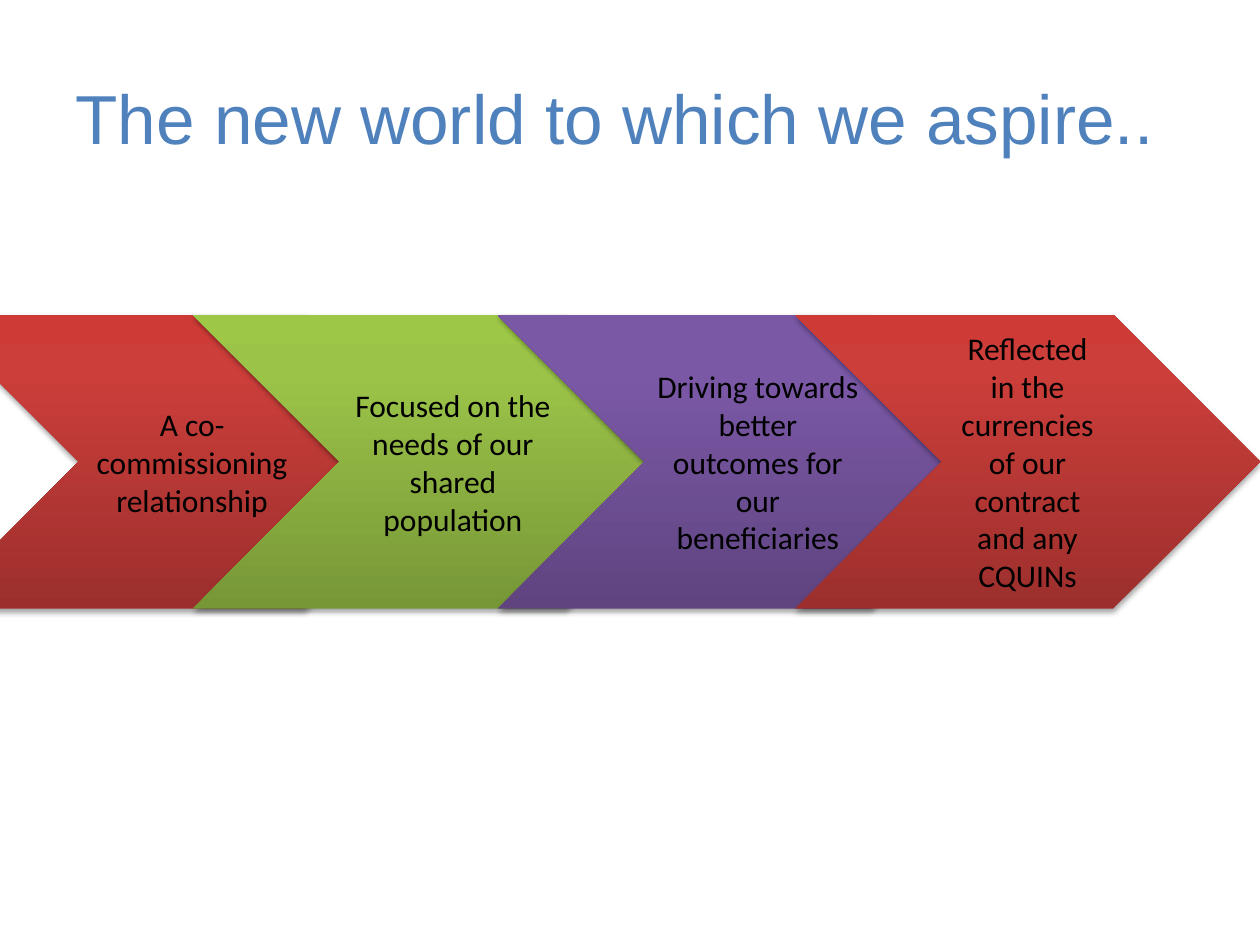
from typing import NamedTuple

from lxml import etree
from pptx import Presentation
from pptx.dml.color import RGBColor
from pptx.enum.shapes import MSO_SHAPE
from pptx.enum.text import MSO_ANCHOR, MSO_AUTO_SIZE, PP_ALIGN
from pptx.oxml.ns import qn
from pptx.util import Inches, Pt

CHEVRON = MSO_SHAPE.CHEVRON
MIDDLE = MSO_ANCHOR.MIDDLE
NO_FIT = MSO_AUTO_SIZE.NONE
LEFT, CENTER = PP_ALIGN.LEFT, PP_ALIGN.CENTER

COLORS = {
    "title": "4F81BD",
    "text": "000000",
    "shadow": "000000",
    "red_dark": "9C2F2D", "red_mid": "CB3E3A", "red_light": "CE3B37",
    "green_dark": "779737", "green_mid": "9BC348", "green_light": "9DC746",
    "purple_dark": "5F4480", "purple_mid": "7B58A6", "purple_light": "7C57A8",
}
STOPS = {"dark": 0, "mid": 80, "light": 100}
TITLE_FONT = {"name": "Arial", "size": Pt(39.6)}
STEP_FONT = {"name": "Calibri", "size": Pt(18)}
FRAME = {"word_wrap": True, "auto_size": NO_FIT, "vertical_anchor": MIDDLE}
STEP_TOP, STEP_HEIGHT = 2.5, 2.33


class Step(NamedTuple):
    text: str
    hue: str
    left: float
    width: float = 4.13


STEPS = [
    Step("A co-commissioning relationship", "red", -0.54),
    Step("Focused on the needs of our shared population", "green", 1.53),
    Step("Driving towards better outcomes for our beneficiaries", "purple", 3.95),
    Step("Reflected in the currencies of our contract and any CQUINs", "red", 6.31, 3.69),
]


def set_attrs(obj, values: dict) -> None:
    for name, value in values.items():
        setattr(obj, name, value)


def write_text(tf, text: str, font: dict, color: str, align) -> None:
    set_attrs(tf, FRAME)
    p = tf.paragraphs[0]
    p.alignment = align
    r = p.add_run()
    r.text = text
    set_attrs(r.font, font)
    r.font.color.rgb = RGBColor.from_string(COLORS[color])


def add_child(parent, tag: str, **attrs):
    return etree.SubElement(parent, qn(tag), {k: str(v) for k, v in attrs.items()})


def fill_gradient(shape, hue: str) -> None:
    shape.fill.gradient()
    shape.fill.gradient_angle = 90
    stops = shape._element.spPr.find(qn("a:gradFill")).find(qn("a:gsLst"))
    for stop in list(stops):
        stops.remove(stop)
    for tone, percent in STOPS.items():
        stop = add_child(stops, "a:gs", pos=percent * 1000)
        add_child(stop, "a:srgbClr", val=COLORS[f"{hue}_{tone}"])


def add_shadow(shape) -> None:
    shape.shadow.inherit = False
    effects = shape._element.spPr.find(qn("a:effectLst"))
    shadow = add_child(effects, "a:outerShdw", blurRad=Pt(3.1), dist=Pt(1.8),
                       dir=90 * 60000, rotWithShape=0)
    color = add_child(shadow, "a:srgbClr", val=COLORS["shadow"])
    add_child(color, "a:alpha", val=35000)


def draw_step(s, step: Step) -> None:
    sp = s.shapes.add_shape(CHEVRON, Inches(step.left), Inches(STEP_TOP),
                            Inches(step.width), Inches(STEP_HEIGHT))
    fill_gradient(sp, step.hue)
    sp.line.fill.background()
    add_shadow(sp)
    write_text(sp.text_frame, step.text, STEP_FONT, "text", CENTER)


def main() -> None:
    prs = Presentation()
    prs.slide_width, prs.slide_height = Inches(10), Inches(7.5)
    s = prs.slides.add_slide(prs.slide_layouts[5])
    title = s.shapes.title
    set_attrs(title, {"left": Inches(0.5), "top": Inches(0.3),
                      "width": Inches(9), "height": Inches(1.25)})
    write_text(title.text_frame, "The new world to which we aspire..",
               TITLE_FONT, "title", LEFT)
    for step in STEPS:
        draw_step(s, step)
    prs.save("out.pptx")


if __name__ == "__main__":
    main()
